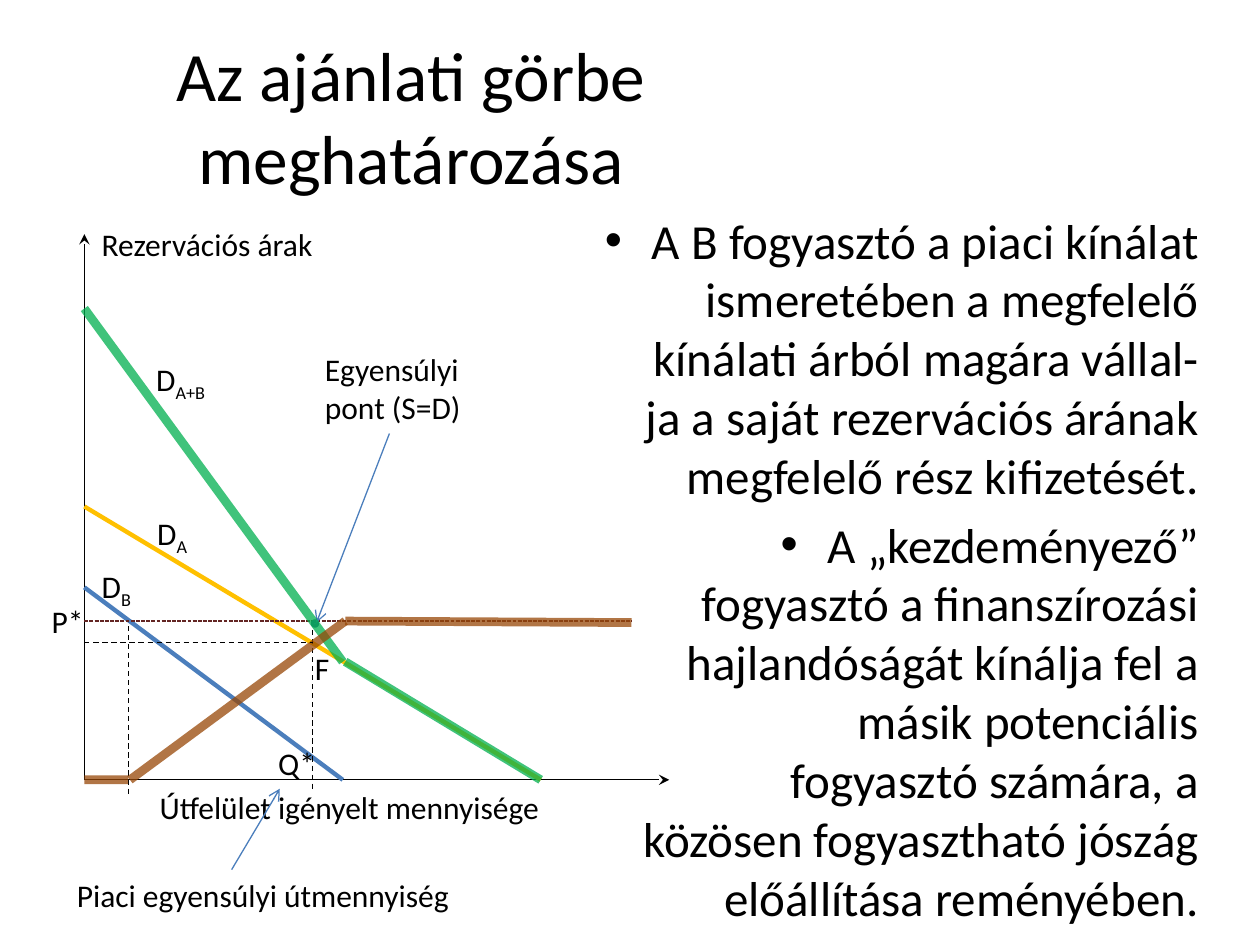
from lxml.etree import SubElement
from pptx import Presentation
from pptx.dml.color import RGBColor
from pptx.enum.dml import MSO_LINE
from pptx.enum.shapes import MSO_CONNECTOR, MSO_SHAPE
from pptx.enum.text import MSO_ANCHOR, MSO_AUTO_SIZE, PP_ALIGN
from pptx.oxml.ns import qn
from pptx.util import Cm, Pt

BLACK = RGBColor(0x00, 0x00, 0x00)
BLUE = RGBColor(0x4B, 0x7E, 0xBC)
POINT_FILL = RGBColor(0x4F, 0x81, 0xBD)
POINT_EDGE = RGBColor(0x3A, 0x5F, 0x8C)
YELLOW = RGBColor(0xFF, 0xC0, 0x00)
GREEN = RGBColor(0x00, 0xB0, 0x50)
BROWN = RGBColor(0x98, 0x48, 0x07)
MAROON = RGBColor(0x63, 0x25, 0x23)

AXIS_X, AXIS_Y = 1.7, 15.72
PRICE_Y = 12.52
QUANTITY_X = 6.3
KINK_X, KINK_Y = 6.96, 13.34
DEMAND_END_X = 10.9
SUPPLY_START_X, SUPPLY_END_X = 2.62, 12.73
SHARE_Y = 12.95

THIN = {"width": Pt(0.75)}
DASHED = {"width": Pt(0.75), "dash_style": MSO_LINE.DASH}
FINE_DASHED = {"width": Pt(0.75), "dash_style": MSO_LINE.SQUARE_DOT}
MEDIUM = {"width": Pt(2.5)}
THICK = {"width": Pt(5)}


def apply_format(target, values):
    for name, value in values.items():
        setattr(target, name, value)


class SlideBuilder:
    def __init__(self, slide, font_name, color):
        self.slide = slide
        self.font_name = font_name
        self.color = color

    def add_run(self, paragraph, text, size, baseline=None):
        run = paragraph.add_run()
        run.text = text
        apply_format(run.font, {"name": self.font_name, "size": Pt(size)})
        run.font.color.rgb = self.color
        if baseline:
            run.font._element.set("baseline", str(baseline))

    def title(self, text, left, top, width, height):
        shape = self.slide.shapes.title
        apply_format(shape, {"left": Cm(left), "top": Cm(top),
                             "width": Cm(width), "height": Cm(height)})
        frame = shape.text_frame
        apply_format(frame, {"word_wrap": True, "vertical_anchor": MSO_ANCHOR.MIDDLE})
        paragraph = frame.paragraphs[0]
        paragraph.alignment = PP_ALIGN.CENTER
        self.add_run(paragraph, text, 39.6)

    def text_box(self, left, top, width, height):
        shape = self.slide.shapes.add_textbox(Cm(left), Cm(top), Cm(width), Cm(height))
        shape.text_frame.word_wrap = True
        return shape.text_frame

    def bullets(self, texts, left, top, width, height):
        frame = self.text_box(left, top, width, height)
        for index, text in enumerate(texts):
            paragraph = frame.add_paragraph() if index else frame.paragraphs[0]
            apply_format(paragraph, {"alignment": PP_ALIGN.RIGHT, "space_before": Pt(5.6)})
            properties = paragraph._p.get_or_add_pPr()
            indent = Cm(0.95)
            properties.set("marL", str(indent))
            properties.set("indent", str(-indent))
            SubElement(properties, qn("a:buFont")).set("typeface", "Arial")
            SubElement(properties, qn("a:buChar")).set("char", "•")
            for part_index, part in enumerate(text.split("\n")):
                if part_index:
                    paragraph.add_line_break()
                self.add_run(paragraph, part, 28)

    def label(self, text, left, top, width, height=1.02, subscript=None):
        frame = self.text_box(left, top, width, height)
        frame.auto_size = MSO_AUTO_SIZE.SHAPE_TO_FIT_TEXT
        paragraph = frame.paragraphs[0]
        self.add_run(paragraph, text, 18)
        if subscript:
            self.add_run(paragraph, subscript, 18, -25000)

    def line(self, start, end, color, values, arrow=None, opacity=None):
        connector = self.slide.shapes.add_connector(
            MSO_CONNECTOR.STRAIGHT, *(Cm(value) for value in start + end))
        connector.line.color.rgb = color
        apply_format(connector.line, values)
        properties = connector._element.spPr
        if opacity:
            color_element = properties.find(".//" + qn("a:srgbClr"))
            SubElement(color_element, qn("a:alpha")).set("val", str(opacity * 1000))
        if arrow:
            SubElement(properties.find(qn("a:ln")), qn("a:tailEnd")).set("type", arrow)
        SubElement(properties, qn("a:effectLst"))

    def point(self, left, top, diameter):
        shape = self.slide.shapes.add_shape(
            MSO_SHAPE.OVAL, Cm(left), Cm(top), Cm(diameter), Cm(diameter))
        shape.shadow.inherit = False
        shape.fill.solid()
        shape.fill.fore_color.rgb = POINT_FILL
        shape.line.color.rgb = POINT_EDGE
        shape.line.width = Pt(2)


def main():
    presentation = Presentation()
    apply_format(presentation, {"slide_width": Cm(25.4), "slide_height": Cm(19.05)})
    slide = presentation.slides.add_slide(presentation.slide_layouts[5])
    builder = SlideBuilder(slide, "Calibri", BLACK)

    builder.title("Az ajánlati görbe meghatározása", -0.53, 0.74, 17.63, 3.18)
    builder.bullets([
        "A B fogyasztó a piaci kínálat ismeretében a megfelelő kínálati árból magára "
        "vállal-ja a saját rezervációs árának megfelelő rész kifizetését.",
        "A „kezdeményező” fogyasztó a finanszírozási hajlandóságát kínálja fel a másik "
        "potenciális\nfogyasztó számára, a közösen fogyasztható jószág előállítása "
        "reményében.",
    ], 11.71, 4.11, 12.7, 15.01)

    origin = (AXIS_X, AXIS_Y)
    builder.line(origin, (AXIS_X, 4.72), BLACK, THIN, arrow="stealth")
    builder.line(origin, (13.49, AXIS_Y), BLACK, THIN, arrow="stealth")

    builder.line((AXIS_X, 11.84), (6.91, AXIS_Y), BLUE, MEDIUM)
    builder.line((AXIS_X, 10.21), (DEMAND_END_X, AXIS_Y), YELLOW, MEDIUM)
    builder.line(origin, (2.59, AXIS_Y), BROWN, THICK, opacity=75)
    builder.line((KINK_X, KINK_Y), (DEMAND_END_X, AXIS_Y), GREEN, THICK, opacity=75)

    builder.label("D", 1.8, 11.3, 1.8, subscript="B")
    builder.label("D", 2.9, 7.14, 1.8, subscript="A+B")
    builder.label("Rezervációs árak", 1.8, 4.42, 5.79)
    builder.label("Útfelület igényelt mennyisége", 2.97, 15.77, 10.13)
    builder.line((AXIS_X, PRICE_Y), (SUPPLY_END_X, PRICE_Y), MAROON, FINE_DASHED)
    builder.label("D", 2.92, 10.24, 1.8, subscript="A")
    builder.label("P*", 0.79, 12.01, 1.8)

    builder.line((QUANTITY_X, PRICE_Y), (QUANTITY_X, 15.9), BLACK, DASHED)
    builder.point(QUANTITY_X, PRICE_Y, 0.1)
    builder.line((7.85, 8.74), (6.38, 12.55), BLUE, THIN, arrow="arrow")
    builder.label("Egyensúlyi pont (S=D)", QUANTITY_X, 6.93, 4.01, 1.8)
    builder.label("Q*", 5.36, 14.88, 2.11)
    builder.line((4.67, 17.53), (5.64, 15.9), BLUE, THIN, arrow="arrow")
    builder.label("Piaci egyensúlyi útmennyiség", 1.3, 17.53, 9.6)
    builder.line((2.59, 12.62), (2.59, 16), BLACK, DASHED)

    builder.line((AXIS_X, 6.22), (6.91, KINK_Y), GREEN, THICK, opacity=75)
    builder.line((SUPPLY_START_X, AXIS_Y), (KINK_X, PRICE_Y), BROWN, THICK, opacity=75)
    builder.line((KINK_X, PRICE_Y), (SUPPLY_END_X, 12.55), BROWN, THICK, opacity=75)
    builder.line((AXIS_X, SHARE_Y), (QUANTITY_X, SHARE_Y), BLACK, DASHED)
    builder.label("F", 6.1, SHARE_Y, 2.11)

    presentation.save("out.pptx")


if __name__ == "__main__":
    main()
